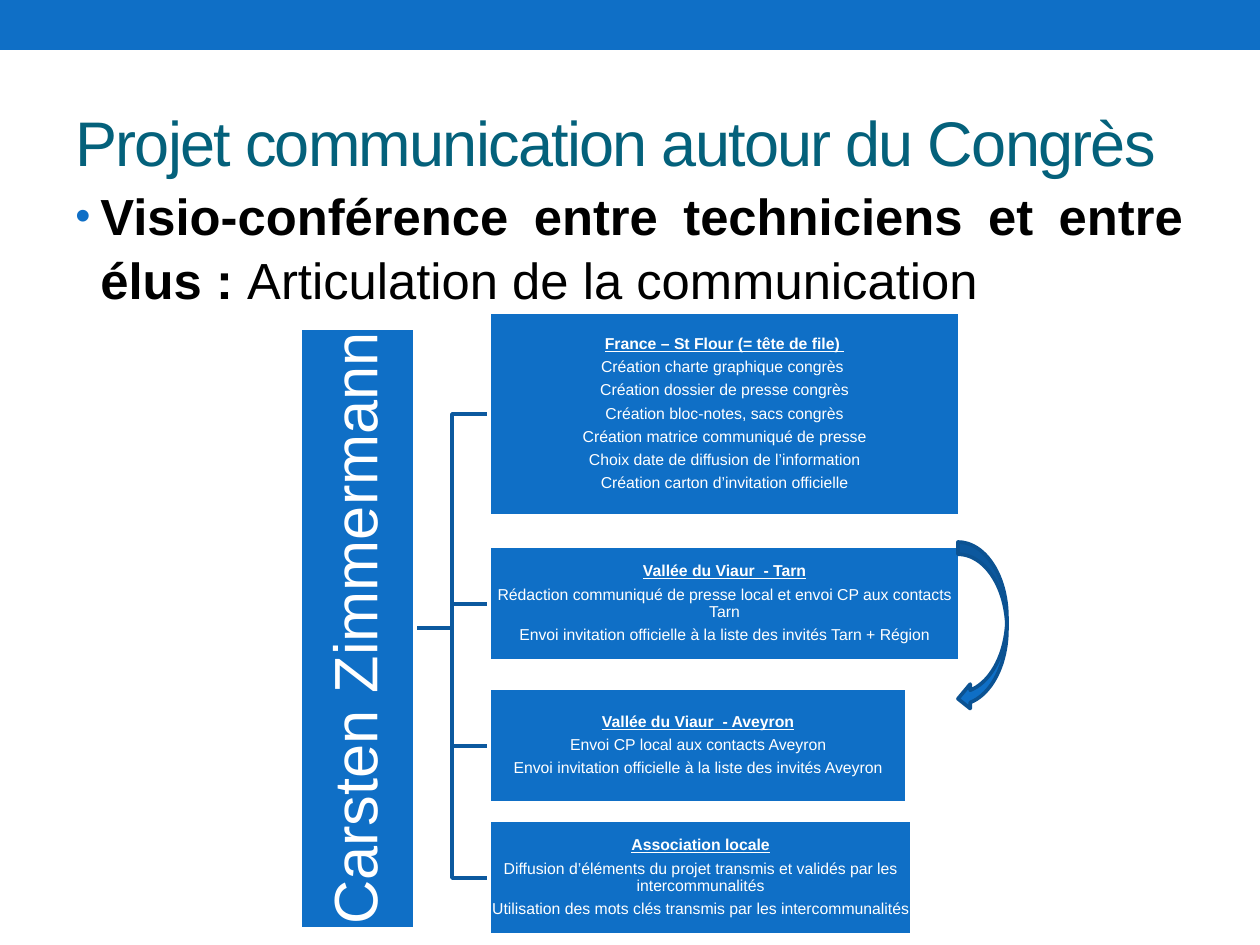
from dataclasses import dataclass
from lxml.etree import SubElement as Sub
from pptx import Presentation as Deck
from pptx.dml.color import RGBColor as Rgb
from pptx.enum.shapes import MSO_SHAPE as Kind
from pptx.enum.text import MSO_ANCHOR as Anchor, PP_ALIGN as Align
from pptx.oxml.ns import qn
from pptx.util import Emu, Pt

UNIT = 914400 / 126


@dataclass
class Theme:
    font: str = "Arial"
    blue: str = "0F6FC6"
    edge: str = "0C599F"
    rim: str = "0B5292"
    teal: str = "04617B"
    white: str = "FFFFFF"
    black: str = "000000"
    head: int = 36
    body: int = 29
    name: int = 35
    note: int = 9
    line: float = 2.08


LOOK = Theme()

TASKS = [
    ((489, 312, 471, 204), [
        "France – St Flour (= tête de file) ",
        "Création charte graphique congrès ",
        "Création dossier de presse congrès",
        "Création bloc-notes, sacs congrès",
        "Création matrice communiqué de presse",
        "Choix date de diffusion de l’information",
        "Création carton d’invitation officielle"]),
    ((489, 546, 471, 115), [
        "Vallée du Viaur  - Tarn",
        "Rédaction communiqué de presse local et envoi CP aux contacts Tarn",
        "Envoi invitation officielle à la liste des invités Tarn + Région"]),
    ((489, 688, 418, 115), [
        "Vallée du Viaur  - Aveyron",
        "Envoi CP local aux contacts Aveyron",
        "Envoi invitation officielle à la liste des invités Aveyron"]),
    ((489, 820, 423, 115), [
        "Association locale",
        "Diffusion d’éléments du projet transmis et validés par les intercommunalités",
        "Utilisation des mots clés transmis par les intercommunalités"]),
]


def px(n):
    return Emu(round(n * UNIT))


def style(run, size, color, bold=False, under=False):
    font = run.font
    font.name, font.size = LOOK.font, Pt(size)
    font.bold, font.underline = bold, under
    font.color.rgb = Rgb.from_string(color)


def stroke(shape, color):
    shape.shadow.inherit = False
    shape.line.color.rgb = Rgb.from_string(color)
    shape.line.width = Pt(LOOK.line)


def solid(slide, kind, box, edge=None):
    shape = slide.shapes.add_shape(kind, *map(px, box))
    shape.fill.solid()
    shape.fill.fore_color.rgb = Rgb.from_string(LOOK.blue)
    shape.shadow.inherit = False
    if edge:
        stroke(shape, edge)
    else:
        shape.line.fill.background()
    return shape


def label(slide, box, anchor):
    frame = slide.shapes.add_textbox(*map(px, box)).text_frame
    frame.word_wrap = True
    frame.vertical_anchor = anchor
    return frame


def title(slide, box):
    frame = label(slide, box, Anchor.MIDDLE)
    frame.text = "Projet communication autour du Congrès"
    run = frame.paragraphs[0].runs[0]
    style(run, LOOK.head, LOOK.teal)
    run.font._element.set("spc", "-100")


def bullet(slide, box):
    para = label(slide, box, Anchor.TOP).paragraphs[0]
    para.alignment = Align.JUSTIFY
    para.line_spacing = 1.05
    props = para._p.get_or_add_pPr()
    props.set("marL", str(px(25)))
    props.set("indent", str(-px(25)))
    Sub(Sub(props, qn("a:buClr")), qn("a:srgbClr"), val=LOOK.blue)
    Sub(props, qn("a:buSzPct"), val="85000")
    Sub(props, qn("a:buFont"), typeface=LOOK.font)
    Sub(props, qn("a:buChar"), char="•")
    for text, bold in (("Visio-conférence entre techniciens et entre élus : ", True),
                       ("Articulation de la communication ", False)):
        run = para.add_run()
        run.text = text
        style(run, LOOK.body, LOOK.black, bold)


def panel(slide, box, lines, size, gap, inset, headed=True):
    shape = solid(slide, Kind.RECTANGLE, box, LOOK.white)
    frame = shape.text_frame
    frame.word_wrap = True
    frame.vertical_anchor = Anchor.MIDDLE
    frame.margin_left = frame.margin_right = px(inset)
    frame.margin_top = frame.margin_bottom = px(inset)
    frame.text = "\n".join(lines)
    for i, para in enumerate(frame.paragraphs):
        para.alignment = Align.CENTER
        para.line_spacing = 0.9
        para.space_after = Pt(gap)
        first = headed and i == 0
        style(para.runs[0], size, LOOK.white, first, first)
    return shape


def link(slide, start, end):
    (x, y), (right, low) = start, end
    mid = (x + right) / 2
    path = slide.shapes.build_freeform(x, y, scale=UNIT)
    path.add_line_segments([(mid, y), (mid, low), (right, low)], close=False)
    shape = path.convert_to_shape()
    shape.fill.background()
    stroke(shape, LOOK.edge)


def tree(slide, box):
    left, top, wide, high = box
    root = (left + wide, top + high / 2)
    for (x, y, _, tall), _ in reversed(TASKS):
        link(slide, root, (x, y + tall / 2))
    flat = (left + (wide - high) / 2, top + (high - wide) / 2, high, wide)
    panel(slide, flat, ["Carsten Zimmermann"], LOOK.name, 0, 3, False).rotation = 270
    for area, lines in TASKS:
        panel(slide, area, lines, LOOK.note, 3.5, 1)


def main():
    deck = Deck()
    deck.slide_width, deck.slide_height = px(1260), px(945)
    slide = deck.slides.add_slide(deck.slide_layouts[6])
    solid(slide, Kind.RECTANGLE, (0, 0, 1260, 50))
    title(slide, (63, 73, 1134, 136))
    bullet(slide, (63, 176, 1134, 698))
    tree(slide, (300, 328, 115, 601))
    solid(slide, Kind.CURVED_LEFT_ARROW, (958, 542, 49, 169), LOOK.rim)
    deck.save("out.pptx")


if __name__ == "__main__":
    main()
